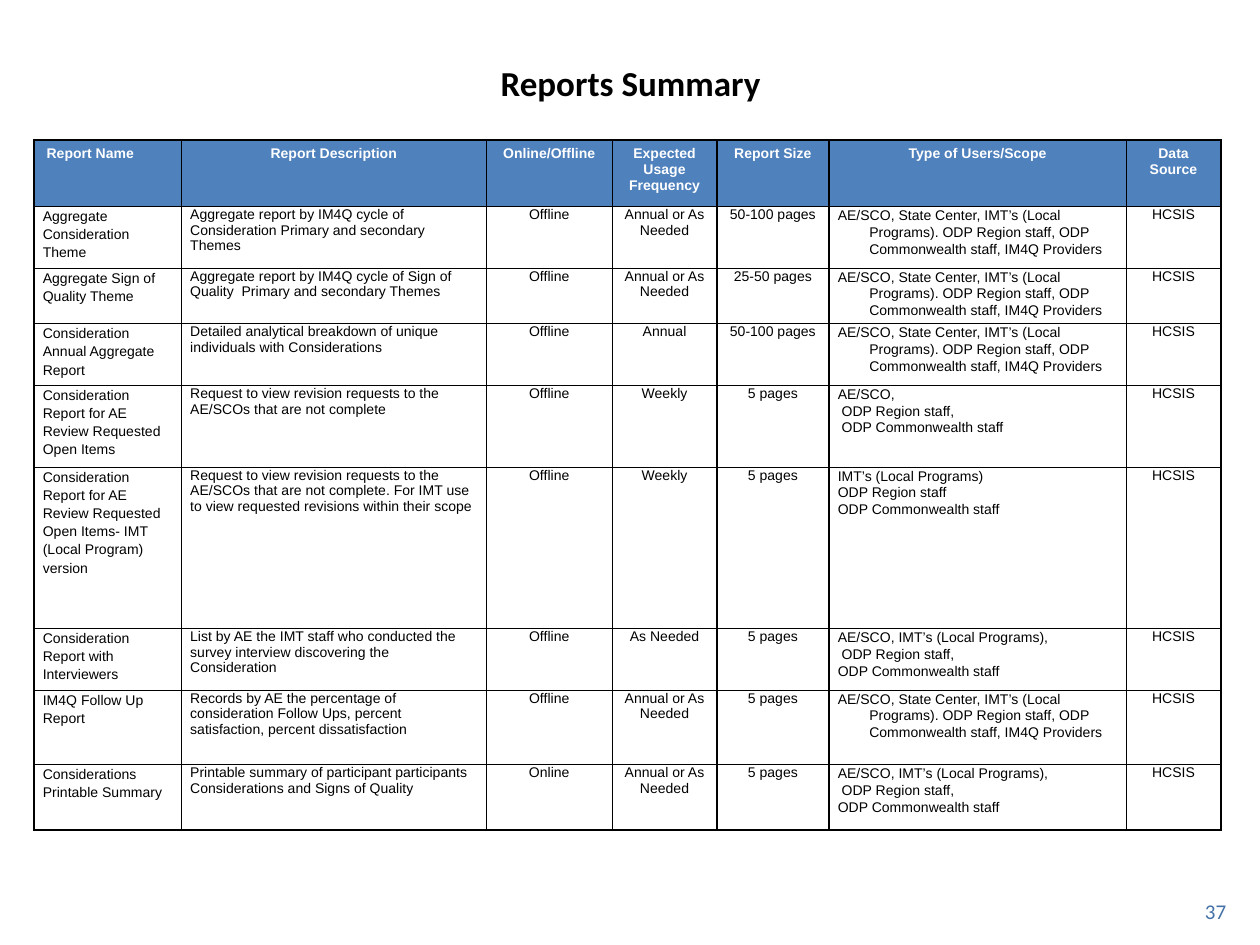
from dataclasses import dataclass

from lxml import etree
from pptx import Presentation
from pptx.dml.color import RGBColor
from pptx.enum.text import MSO_ANCHOR, PP_ALIGN
from pptx.oxml.ns import qn
from pptx.util import Inches, Pt

LEFT, CENTER, RIGHT = PP_ALIGN.LEFT, PP_ALIGN.CENTER, PP_ALIGN.RIGHT
BOTTOM = MSO_ANCHOR.BOTTOM
TITLE_ONLY = 5


@dataclass(frozen=True)
class Theme:
    black: RGBColor = RGBColor(0, 0, 0)
    white: RGBColor = RGBColor(255, 255, 255)
    header: RGBColor = RGBColor(0x4F, 0x81, 0xBD)
    number: RGBColor = RGBColor(0x44, 0x71, 0xA6)
    head_font: str = "Calibri"
    body_font: str = "Arial"
    title_size: int = 20
    number_size: int = 12
    table_size: int = 8


THEME = Theme()

COLUMN_WIDTHS = [1.17, 2.42, 1, 0.83, 0.89, 2.36, 0.75]
ROW_HEIGHTS = [0.53, 0.49, 0.44, 0.49, 0.65, 1.28, 0.49, 0.59, 0.52]
NAME_COLUMN, USERS_COLUMN = 0, 5
LEFT_COLUMNS = (0, 1, 5)

HEADERS = ["Report Name", "Report Description", "Online/Offline",
           "Expected Usage Frequency", "Report Size", "Type of Users/Scope",
           "Data Source"]
ALL_USERS = ("AE/SCO, State Center, IMT’s (Local Programs). ODP Region staff, "
             "ODP Commonwealth staff, IM4Q Providers")
LOCAL_USERS = ("AE/SCO, IMT’s (Local Programs),\n ODP Region staff,\n"
               "ODP Commonwealth staff")
SOURCE = "HCSIS"
REPORTS = [
    ["Aggregate Consideration Theme",
     "Aggregate report by IM4Q cycle of Consideration Primary and secondary Themes",
     "Offline", "Annual or As Needed", "50-100 pages", ALL_USERS],
    ["Aggregate Sign of Quality Theme",
     "Aggregate report by IM4Q cycle of Sign of Quality  Primary and secondary Themes",
     "Offline", "Annual or As Needed", "25-50 pages", ALL_USERS],
    ["Consideration Annual Aggregate Report",
     "Detailed analytical breakdown of unique individuals with Considerations",
     "Offline", "Annual", "50-100 pages", ALL_USERS],
    ["Consideration Report for AE Review Requested Open Items",
     "Request to view revision requests to the AE/SCOs that are not complete",
     "Offline", "Weekly", "5 pages",
     "AE/SCO,\n ODP Region staff,\n ODP Commonwealth staff"],
    ["Consideration Report for AE Review Requested Open Items- IMT "
     "(Local Program) version",
     "Request to view revision requests to the AE/SCOs that are not complete. "
     "For IMT use to view requested revisions within their scope",
     "Offline", "Weekly", "5 pages",
     "IMT’s (Local Programs)\nODP Region staff\nODP Commonwealth staff"],
    ["Consideration Report with Interviewers",
     "List by AE the IMT staff who conducted the survey interview discovering "
     "the Consideration",
     "Offline", "As Needed", "5 pages", LOCAL_USERS],
    ["IM4Q Follow Up Report",
     "Records by AE the percentage of consideration Follow Ups, percent "
     "satisfaction, percent dissatisfaction",
     "Offline", "Annual or As Needed", "5 pages", ALL_USERS],
    ["Considerations Printable Summary",
     "Printable summary of participant participants Considerations and Signs of Quality",
     "Online", "Annual or As Needed", "5 pages", LOCAL_USERS],
]


def write(p, text, font, size, color, bold=False, align=LEFT):
    p.alignment = align
    r = p.add_run()
    r.text = text
    r.font.name, r.font.size, r.font.bold = font, Pt(size), bold
    r.font.color.rgb = color


def set_margins(frame, x, y):
    frame.margin_left = frame.margin_right = Inches(x)
    frame.margin_top = frame.margin_bottom = Inches(y)


def set_borders(cell, color, width):
    """Draw all four cell edges; the lines must come before the fill."""
    tc_pr = cell._tc.get_or_add_tcPr()
    for i, edge in enumerate(("a:lnL", "a:lnR", "a:lnT", "a:lnB")):
        line = etree.Element(qn(edge), w=str(Pt(width)))
        fill = etree.SubElement(line, qn("a:solidFill"))
        etree.SubElement(fill, qn("a:srgbClr"), val=str(color))
        tc_pr.insert(i, line)


def format_report_paragraph(p, column):
    if column == NAME_COLUMN:
        p.line_spacing, p.space_after = 1.15, Pt(10)
    elif column == USERS_COLUMN:
        p.line_spacing = Pt(9.6)
        p_pr = p._p.get_or_add_pPr()
        p_pr.set("marL", str(Inches(0.25)))
        p_pr.set("indent", str(-Inches(0.25)))


def fill_cell(cell, text, column, is_header):
    cell.fill.solid()
    cell.fill.fore_color.rgb = THEME.header if is_header else THEME.white
    set_borders(cell, THEME.black, 1)
    if not is_header:
        set_margins(cell, 0.07, 0)
    left_columns = (NAME_COLUMN,) if is_header else LEFT_COLUMNS
    align = LEFT if column in left_columns else CENTER
    color = THEME.white if is_header else THEME.black
    tf = cell.text_frame
    for i, line in enumerate(text.split("\n")):
        p = tf.add_paragraph() if i else tf.paragraphs[0]
        if not is_header:
            format_report_paragraph(p, column)
        write(p, line, THEME.body_font, THEME.table_size, color, is_header, align)


def add_title(s, x, y, w, h):
    sp = s.shapes.title
    sp.left, sp.top, sp.width, sp.height = map(Inches, (x, y, w, h))
    tf = sp.text_frame
    set_margins(tf, 0, 0)
    tf.vertical_anchor = BOTTOM
    p = tf.paragraphs[0]
    p.line_spacing, p.space_before = 1.06, Pt(0)
    write(p, "Reports Summary", THEME.head_font, THEME.title_size,
          THEME.black, True, CENTER)


def add_reports_table(s, x, y, w, h):
    rows = [HEADERS] + [report + [SOURCE] for report in REPORTS]
    table = s.shapes.add_table(len(rows), len(HEADERS),
                               *map(Inches, (x, y, w, h))).table
    table.horz_banding = False
    for column, width in zip(table.columns, COLUMN_WIDTHS):
        column.width = Inches(w * width / sum(COLUMN_WIDTHS))
    for row, height in zip(table.rows, ROW_HEIGHTS):
        row.height = Inches(h * height / sum(ROW_HEIGHTS))
    for i, row in enumerate(rows):
        for j, text in enumerate(row):
            fill_cell(table.cell(i, j), text, j, i == 0)


def add_page_number(s, x, y, w, h):
    tf = s.shapes.add_textbox(*map(Inches, (x, y, w, h))).text_frame
    tf.word_wrap = True
    write(tf.paragraphs[0], "37", THEME.head_font, THEME.number_size,
          THEME.number, align=RIGHT)


def main():
    prs = Presentation()
    prs.slide_width, prs.slide_height = Inches(10), Inches(7.5)
    s = prs.slides.add_slide(prs.slide_layouts[TITLE_ONLY])
    add_reports_table(s, 0.27, 1.11, 9.42, 5.48)
    add_title(s, 0.44, 0.48, 9.13, 0.34)
    add_page_number(s, 9, 7.08, 0.83, 0.27)
    prs.save("out.pptx")


if __name__ == "__main__":
    main()
